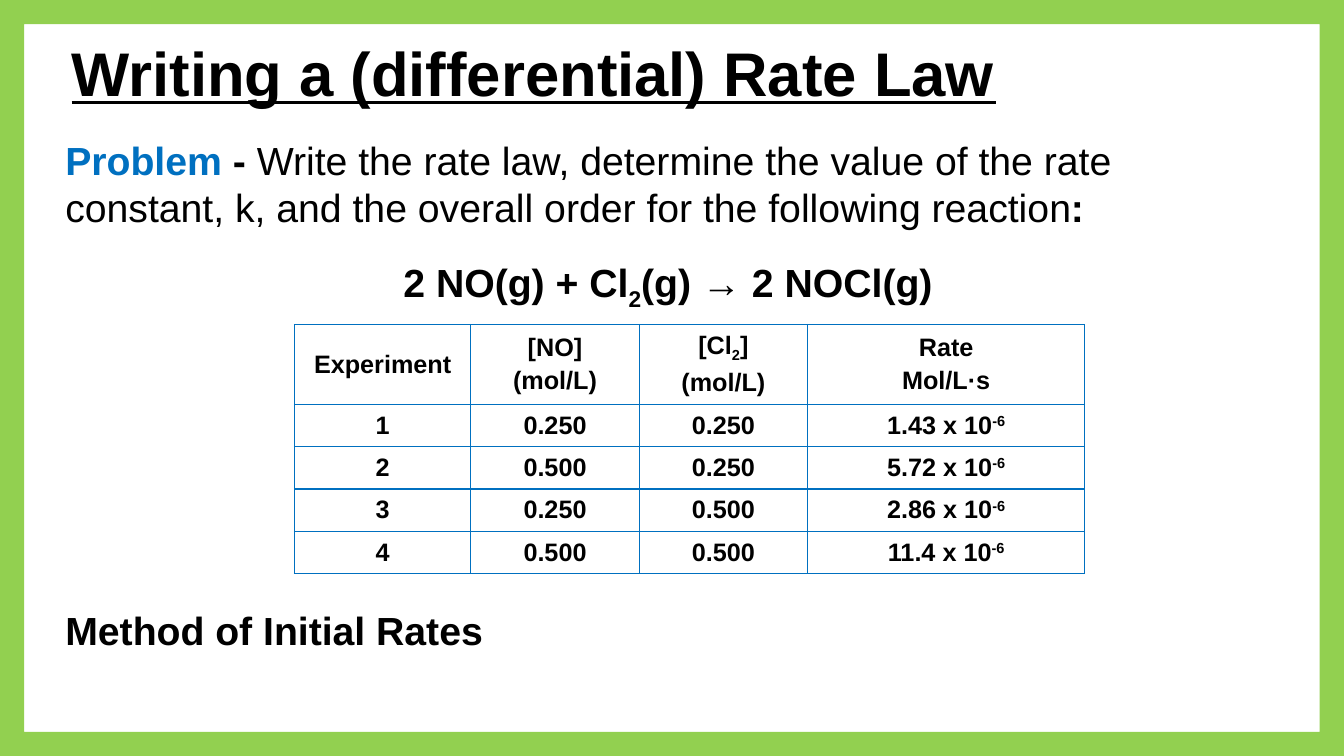
from lxml import etree
from pptx import Presentation, util as u
from pptx.dml.color import RGBColor
from pptx.enum import shapes, text
from pptx.oxml import ns

COLORS = {"frame": "92D050", "accent": "0070C0", "ink": "000000"}
FONT = "Arial"
SUB, SUP = -25000, 30000
CENTER, LEFT = text.PP_ALIGN.CENTER, text.PP_ALIGN.LEFT
HEADERS = [
    [["Experiment"]],
    [["[NO]"], ["(mol/L)"]],
    [["[Cl", ("2", {"base": SUB}), "]"], ["(mol/L)"]],
    [["Rate"], ["Mol/L·s"]],
]
TRIALS = [
    ("1", "0.250", "0.250", "1.43"),
    ("2", "0.500", "0.250", "5.72"),
    ("3", "0.250", "0.500", "2.86"),
    ("4", "0.500", "0.500", "11.4"),
]


def add_run(p, words, size=28, color="ink", bold=True, underline=None, base=None):
    """Append one formatted run to a paragraph."""
    r = p.add_run()
    r.text = words
    r.font.name, r.font.size = FONT, u.Pt(size)
    r.font.bold, r.font.underline = bold, underline
    r.font.color.rgb = RGBColor.from_string(COLORS[color])
    if base:
        r._r.get_or_add_rPr().set("baseline", str(base))


def write(tf, paragraphs, align=LEFT, before=0, line=None, **fmt):
    """Fill a text frame with paragraphs made of strings or (string, format) runs."""
    tf.word_wrap = True
    for i, runs in enumerate(paragraphs):
        p = tf.add_paragraph() if i else tf.paragraphs[0]
        p.alignment = align
        p.space_before = u.Pt(before if i else 0)
        if line:
            p.line_spacing = u.Pt(line)
        for run in runs:
            words, own = (run, {}) if isinstance(run, str) else run
            add_run(p, words, **{**fmt, **own})


def add_frame(s, box):
    """Draw the green border around the slide."""
    sp = s.shapes.add_shape(shapes.MSO_SHAPE.FRAME, *map(u.Inches, box))
    sp.adjustments[0] = 0.032
    sp.shadow.inherit = False
    sp.fill.solid()
    sp.fill.fore_color.rgb = RGBColor.from_string(COLORS["frame"])
    sp.line.fill.background()


def add_title(s, box):
    """Place and format the title placeholder."""
    sp = s.shapes.title
    sp.left, sp.top, sp.width, sp.height = map(u.Inches, box)
    sp.text_frame.vertical_anchor = text.MSO_ANCHOR.MIDDLE
    write(sp.text_frame, [["Writing a (differential) Rate Law"]], size=44, underline=True)


def add_text(s, box, paragraphs, **fmt):
    """Place a text box holding the given paragraphs."""
    tf = s.shapes.add_textbox(*map(u.Inches, box)).text_frame
    write(tf, paragraphs, line=33.6, **fmt)


def style_cell(cell):
    """Give a cell thin accent borders and no fill."""
    tcPr = cell._tc.get_or_add_tcPr()
    for side in ("lnL", "lnR", "lnT", "lnB"):
        ln = etree.SubElement(tcPr, ns.qn("a:" + side), w=str(u.Pt(1)))
        fill = etree.SubElement(ln, ns.qn("a:solidFill"))
        etree.SubElement(fill, ns.qn("a:srgbClr"), val=COLORS["accent"])
    cell.fill.background()
    cell.vertical_anchor = text.MSO_ANCHOR.MIDDLE


def add_rates_table(s, box):
    """Build the table of initial rates."""
    rows = [HEADERS]
    for *values, rate in TRIALS:
        rows.append([[[v]] for v in values] + [[[rate + " x 10", ("-6", {"base": SUP})]]])
    table = s.shapes.add_table(len(rows), len(HEADERS), *map(u.Inches, box)).table
    table.first_row = table.horz_banding = False
    for column, width in zip(table.columns, (1.75, 1.67, 1.67, 2.75)):
        column.width = u.Inches(width)
    for i, row in enumerate(rows):
        table.rows[i].height = u.Inches(0.42 if i else 0.78)
        for j, paragraphs in enumerate(row):
            cell = table.cell(i, j)
            style_cell(cell)
            write(cell.text_frame, paragraphs, align=CENTER, before=3.6, size=18)


def main():
    """Build the rate law slide and save it."""
    prs = Presentation()
    prs.slide_width, prs.slide_height = u.Inches(13.33), u.Inches(7.5)
    s = prs.slides.add_slide(prs.slide_layouts[5])
    add_frame(s, (0, 0, 13.33, 7.5))
    add_title(s, (0.61, 0.23, 10.56, 0.96))
    problem = [
        ("Problem ", {"color": "accent"}),
        "- ",
        ("Write the rate law, determine the value of the rate constant, k, "
         "and the overall order for the following reaction", {"bold": False}),
        ":",
    ]
    add_text(s, (0.55, 1.3, 12.23, 5.28), [problem, ["Method of Initial Rates"]], before=269)
    equation = ["2 NO(g) + Cl", ("2", {"base": SUB}), "(g) → 2 NOCl(g)"]
    add_text(s, (3.5, 2.58, 6.25, 0.57), [equation], align=CENTER)
    add_rates_table(s, (2.92, 3.22, 7.83, 2.42))
    prs.save("out.pptx")


if __name__ == "__main__":
    main()
